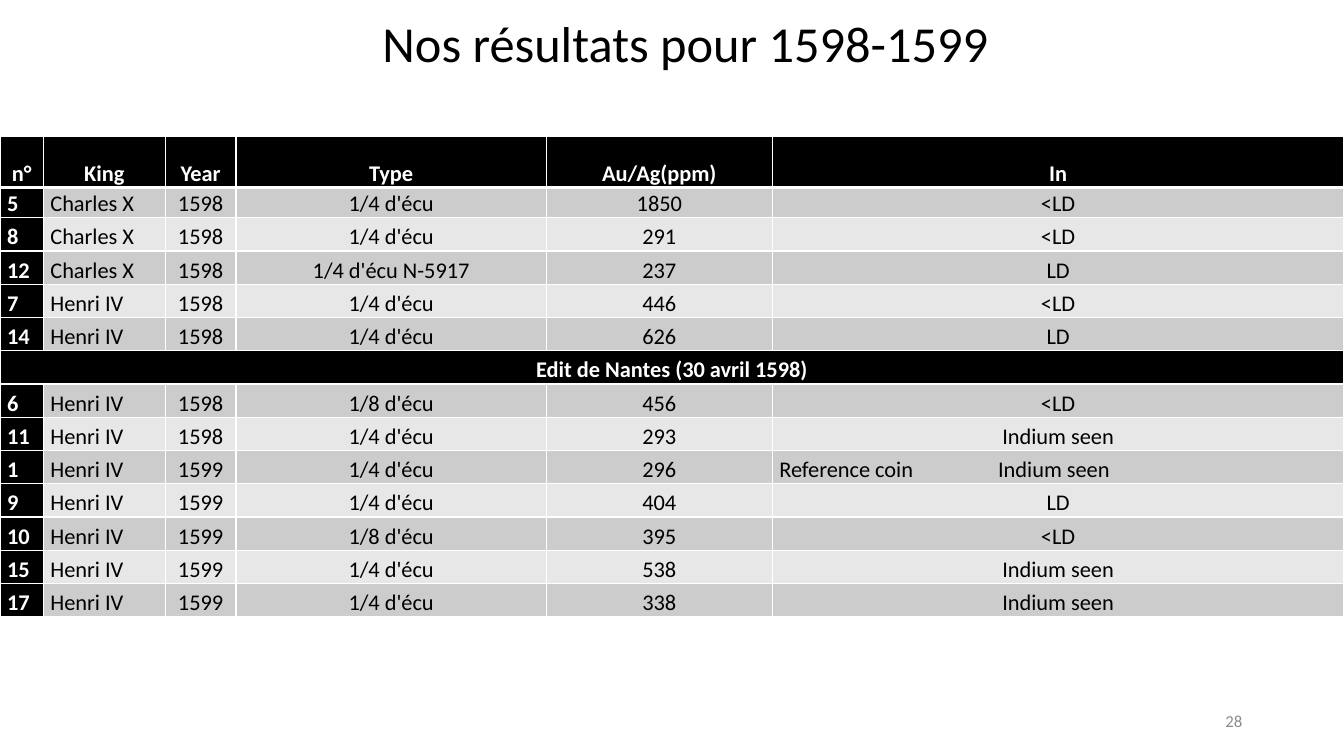
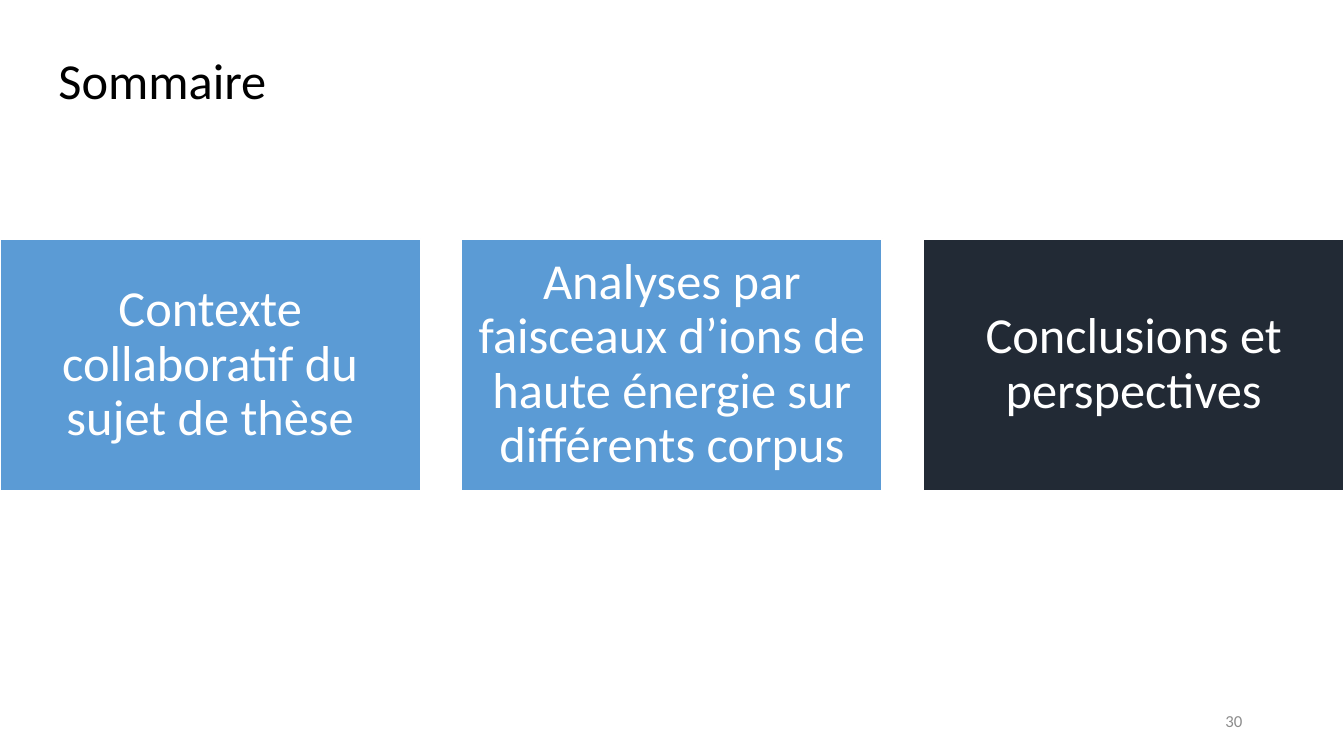
from dataclasses import dataclass

from lxml import etree
from pptx import Presentation
from pptx.dml.color import RGBColor
from pptx.enum.shapes import MSO_SHAPE
from pptx.enum.text import MSO_ANCHOR, MSO_AUTO_SIZE, PP_ALIGN
from pptx.oxml.ns import qn
from pptx.util import Inches, Pt

LEFT, CENTER, RIGHT = PP_ALIGN.LEFT, PP_ALIGN.CENTER, PP_ALIGN.RIGHT
TOP, MIDDLE, BOTTOM = MSO_ANCHOR.TOP, MSO_ANCHOR.MIDDLE, MSO_ANCHOR.BOTTOM
RECT = MSO_SHAPE.RECTANGLE
NO_FIT = MSO_AUTO_SIZE.NONE
TITLE_ONLY = 5


# Shared style
@dataclass(frozen=True)
class Theme:
    font: str = "Calibri"
    black: str = "000000"
    white: str = "FFFFFF"
    band_dark: str = "CCCCCC"
    band_light: str = "E7E7E7"
    blue: str = "5B9BD5"
    navy: str = "222A35"
    gray: str = "8C8C8C"
    large: int = 36
    table: int = 16
    small: int = 12
    thin: float = 1
    thick: float = 3


# Elements
class Deck:
    def __init__(self, prs, theme):
        self.prs, self.theme = prs, theme
        self.s = None

    def set_text(self, tf, text, size, color, align, bold=False, spacing=None):
        tf.text = text
        p = tf.paragraphs[0]
        p.alignment = align
        if spacing:
            p.line_spacing = spacing
        for r in p.runs:
            r.font.name, r.font.size, r.font.bold = self.theme.font, Pt(size), bold
            r.font.color.rgb = RGBColor.from_string(color)
        return p

    def new_slide(self, title, number, box, align, wrap=True):
        t = self.theme
        self.s = self.prs.slides.add_slide(self.prs.slide_layouts[TITLE_ONLY])
        sp = self.s.shapes.title
        sp.left, sp.top, sp.width, sp.height = map(Inches, box)
        tf = sp.text_frame
        tf.auto_size, tf.word_wrap, tf.vertical_anchor = NO_FIT, wrap, TOP
        self.set_text(tf, title, t.large, t.black, align)
        self.page_number(number)

    def page_number(self, number):
        sp = self.s.shapes.add_textbox(Inches(9.42), Inches(6.95), Inches(3), Inches(0.4))
        tf = sp.text_frame
        tf.word_wrap, tf.vertical_anchor = True, MIDDLE
        self.set_text(tf, str(number), self.theme.small, self.theme.gray, RIGHT)

    def box(self, text, fill, left, top, width, height):
        t = self.theme
        sp = self.s.shapes.add_shape(RECT, *map(Inches, (left, top, width, height)))
        sp.shadow.inherit = False
        sp.fill.solid()
        sp.fill.fore_color.rgb = RGBColor.from_string(fill)
        sp.line.color.rgb = RGBColor.from_string(t.white)
        sp.line.width = Pt(t.thin)
        tf = sp.text_frame
        tf.word_wrap, tf.vertical_anchor = True, MIDDLE
        tf.margin_left = tf.margin_right = tf.margin_top = tf.margin_bottom = Inches(0.15)
        self.set_text(tf, text, t.large, t.white, CENTER, spacing=0.9)

    def borders(self, cell, top, bottom):
        tc_pr = cell._tc.get_or_add_tcPr()
        thin = self.theme.thin
        for side, width in (("L", thin), ("R", thin), ("T", top), ("B", bottom)):
            ln = etree.SubElement(tc_pr, qn(f"a:ln{side}"), w=str(Pt(width)))
            fill = etree.SubElement(ln, qn("a:solidFill"))
            etree.SubElement(fill, qn("a:srgbClr"), val=self.theme.white)

    def cell(self, cell, text, fill, color, align, bold, top, bottom):
        cell.margin_left = cell.margin_right = Inches(0.07)
        cell.margin_top = cell.margin_bottom = 0
        cell.vertical_anchor = BOTTOM
        self.borders(cell, top, bottom)
        cell.fill.solid()
        cell.fill.fore_color.rgb = RGBColor.from_string(fill)
        p = self.set_text(cell.text_frame, text, self.theme.table, color, align, bold, 1.07)
        if "\t" in text:
            tabs = etree.SubElement(p._p.get_or_add_pPr(), qn("a:tabLst"))
            etree.SubElement(tabs, qn("a:tab"), pos=str(Inches(2.17)), algn="l")

    def table(self, rows, widths, heights, left, top):
        """Draw a banded table; a row with a single text spans every column."""
        t = self.theme
        size = map(Inches, (left, top, sum(widths), sum(heights)))
        table = self.s.shapes.add_table(len(rows), len(widths), *size).table
        table.horz_banding = False
        for column, width in zip(table.columns, widths):
            column.width = Inches(width)
        for i, (row, height) in enumerate(zip(rows, heights)):
            table.rows[i].height = Inches(height)
            banner = len(row) == 1
            texts = row + ("",) * (len(widths) - len(row))
            for j, text in enumerate(texts):
                dark = i == 0 or j == 0 or banner
                band = t.band_dark if i % 2 else t.band_light
                centered = i == 0 or banner or (j > 1 and "\t" not in text)
                self.cell(table.cell(i, j), text,
                          fill=t.black if dark else band,
                          color=t.white if dark else t.black,
                          align=CENTER if centered else LEFT, bold=dark,
                          top=t.thick if i == 1 else t.thin,
                          bottom=t.thick if i == 0 else t.thin)
            if banner:
                table.cell(i, 0).merge(table.cell(i, len(widths) - 1))


# Slides
COINS = [
    ("n°", "King", "Year", "Type", "Au/Ag(ppm)", "In"),
    ("5", "Charles X", "1598", "1/4 d'écu", "1850", "<LD"),
    ("8", "Charles X", "1598", "1/4 d'écu", "291", "<LD"),
    ("12", "Charles X", "1598", "1/4 d'écu N-5917", "237", "LD"),
    ("7", "Henri IV", "1598", "1/4 d'écu", "446", "<LD"),
    ("14", "Henri IV", "1598", "1/4 d'écu", "626", "LD"),
    ("Edit de Nantes (30 avril 1598)",),
    ("6", "Henri IV", "1598", "1/8 d'écu", "456", "<LD"),
    ("11", "Henri IV", "1598", "1/4 d'écu", "293", "Indium seen"),
    ("1", "Henri IV", "1599", "1/4 d'écu", "296", "Reference coin\tIndium seen"),
    ("9", "Henri IV", "1599", "1/4 d'écu", "404", "LD"),
    ("10", "Henri IV", "1599", "1/8 d'écu", "395", "<LD"),
    ("15", "Henri IV", "1599", "1/4 d'écu", "538", "Indium seen"),
    ("17", "Henri IV", "1599", "1/4 d'écu", "338", "Indium seen"),
]


def results_slide(deck):
    deck.new_slide("Nos résultats pour 1598-1599", 28, (0.52, 0.07, 12.56, 0.71), CENTER)
    heights = [0.51, 0.3] + [0.33] * (len(COINS) - 2)
    deck.table(COINS, [0.43, 1.21, 0.7, 3.08, 2.24, 5.67], heights, 0, 1.35)


def summary_slide(deck):
    t = deck.theme
    deck.new_slide("Sommaire", 30, (0.48, 0.44, 2.28, 0.71), LEFT, wrap=False)
    parts = [
        ("Contexte collaboratif du sujet de thèse", t.blue),
        ("Analyses par faisceaux d’ions de haute énergie sur différents corpus", t.blue),
        ("Conclusions et perspectives", t.navy),
    ]
    width, gap = 4.17, 0.41
    for i, (text, fill) in enumerate(parts):
        deck.box(text, fill, i * (width + gap), 2.37, width, 2.5)


def main():
    prs = Presentation()
    prs.slide_width, prs.slide_height = Inches(13.33), Inches(7.5)
    deck = Deck(prs, Theme())
    results_slide(deck)
    summary_slide(deck)
    prs.save("out.pptx")


if __name__ == "__main__":
    main()
